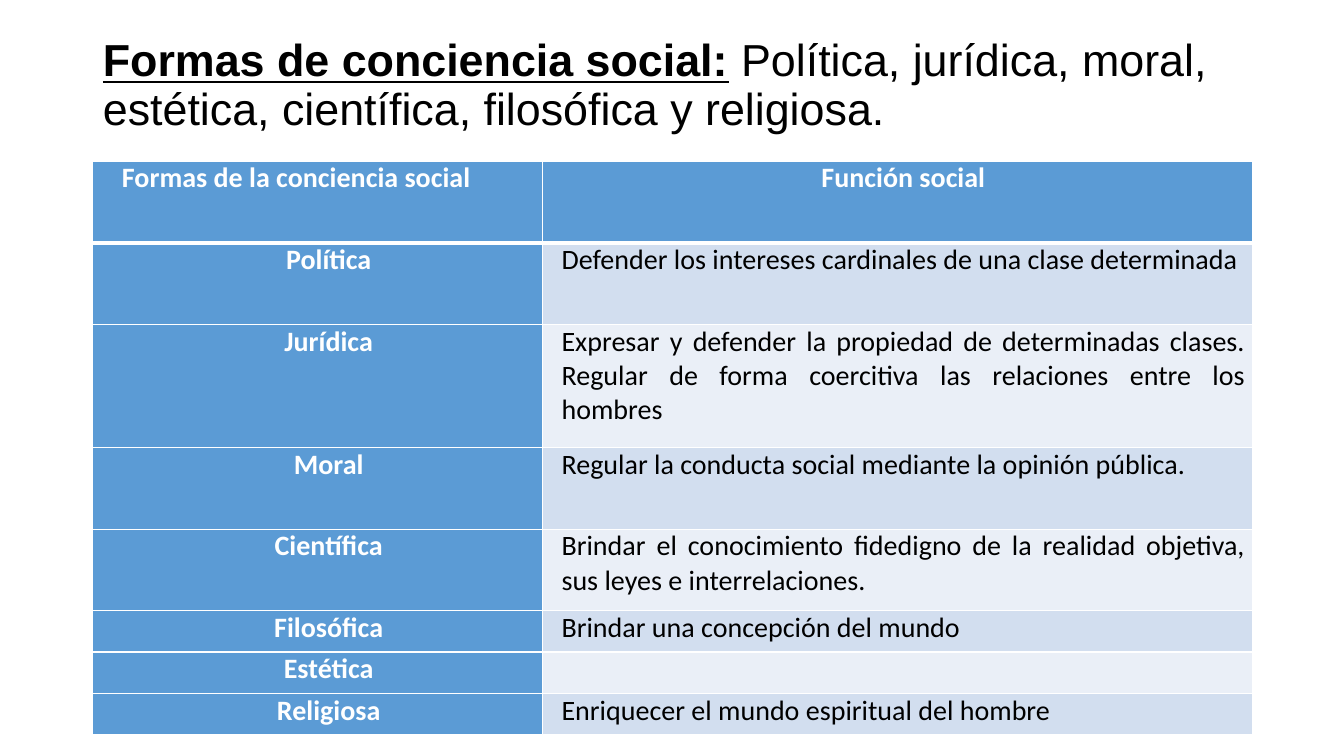
from lxml.etree import SubElement
from pptx import Presentation
from pptx.dml.color import RGBColor
from pptx.enum.text import MSO_ANCHOR as ANCHOR, MSO_AUTO_SIZE as AUTO, PP_ALIGN as ALIGN
from pptx.oxml.ns import qn
from pptx.util import Inches, Pt

COLORS = {"text": "000000", "white": "FFFFFF", "blue": "5B9BD5",
          "band_dark": "D2DEEF", "band_light": "EAEFF7"}
HEADER = ("Formas de la conciencia social", "Función social")
FORMS = [
    ("Política", "Defender los intereses cardinales de una clase determinada", 0.81),
    ("Jurídica", "Expresar y defender la propiedad de determinadas clases. "
     "Regular de forma coercitiva las relaciones entre los hombres", 1.22),
    ("Moral", "Regular la conducta social mediante la opinión pública.", 0.81),
    ("Científica", "Brindar el conocimiento fidedigno de la realidad objetiva, "
     "sus leyes e interrelaciones.", 0.81),
    ("Filosófica", "Brindar una concepción del mundo", 0.41),
    ("Estética", "", 0.41),
    ("Religiosa", "Enriquecer el mundo espiritual del hombre", 0.41),
]


def rgb(name):
    """Return the named palette colour."""
    return RGBColor.from_string(COLORS[name])


def add_run(p, text, font, size, color, bold=False, underline=False):
    """Append one formatted run to a paragraph."""
    r = p.add_run()
    r.text = text
    r.font.name, r.font.size = font, Pt(size)
    r.font.bold, r.font.underline = bold, underline
    r.font.color.rgb = rgb(color)


def set_borders(cell, widths):
    """Draw white cell borders with the given widths in points."""
    tcPr = cell._tc.get_or_add_tcPr()
    for i, (side, width) in enumerate(widths.items()):
        ln = SubElement(tcPr, qn(f"a:ln{side}"), w=str(Pt(width)))
        fill = SubElement(ln, qn("a:solidFill"))
        SubElement(fill, qn("a:srgbClr"), val=COLORS["white"])
        tcPr.insert(i, ln)


def fill_cell(cell, text, fill, color, bold, align, indent, bottom=1, top=1):
    """Format one table cell and write its text."""
    cell.fill.solid()
    cell.fill.fore_color.rgb = rgb(fill)
    cell.margin_left = cell.margin_right = Inches(0.07)
    cell.margin_top = cell.margin_bottom = 0
    set_borders(cell, {"L": 1, "R": 1, "T": top, "B": bottom})
    if text:
        p = cell.text_frame.paragraphs[0]
        p.alignment = align
        pPr = p._p.get_or_add_pPr()
        pPr.set("marL", str(Inches(indent)))
        pPr.set("indent", "0")
        add_run(p, text, "Calibri", 20, color, bold)


def add_title(s, left, top, width, height):
    """Place the slide title in its placeholder."""
    sp = s.shapes.title
    sp.left, sp.top, sp.width, sp.height = map(Inches, (left, top, width, height))
    tf = sp.text_frame
    tf.word_wrap, tf.auto_size = True, AUTO.NONE
    tf.vertical_anchor = ANCHOR.MIDDLE
    tf.margin_bottom = Inches(0.58)
    p = tf.paragraphs[0]
    p.alignment, p.line_spacing = ALIGN.LEFT, 0.9
    add_run(p, "Formas de conciencia social:", "Arial", 32, "text", True, True)
    add_run(p, " Política, jurídica, moral, estética, científica, filosófica y religiosa.",
            "Arial", 32, "text")


def add_forms_table(s, left, top, width, height):
    """Build the table of forms and their social functions."""
    frame = s.shapes.add_table(len(FORMS) + 1, 2, *map(Inches, (left, top, width, height)))
    table = frame.table
    table.columns[0].width = Inches(4.46)
    table.columns[1].width = Inches(width - 4.46)
    table.rows[0].height = Inches(0.81)
    fill_cell(table.cell(0, 0), HEADER[0], "blue", "white", True, ALIGN.JUSTIFY, 0.22, bottom=3)
    fill_cell(table.cell(0, 1), HEADER[1], "blue", "white", True, ALIGN.CENTER, 0.12, bottom=3)
    for i, (form, function, row_height) in enumerate(FORMS, 1):
        table.rows[i].height = Inches(row_height)
        band = "band_dark" if i % 2 else "band_light"
        rule = 3 if i == 1 else 1
        fill_cell(table.cell(i, 0), form, "blue", "white", True, ALIGN.CENTER, 0.22, top=rule)
        fill_cell(table.cell(i, 1), function, band, "text", False, ALIGN.JUSTIFY, 0.12, top=rule)


def main():
    """Create the presentation and save it."""
    prs = Presentation()
    prs.slide_width, prs.slide_height = Inches(13.33), Inches(7.5)
    s = prs.slides.add_slide(prs.slide_layouts[5])
    add_title(s, 0.92, 0.4, 11.5, 1.45)
    add_forms_table(s, 0.92, 1.6, 11.5, 5.69)
    prs.save("out.pptx")


if __name__ == "__main__":
    main()
